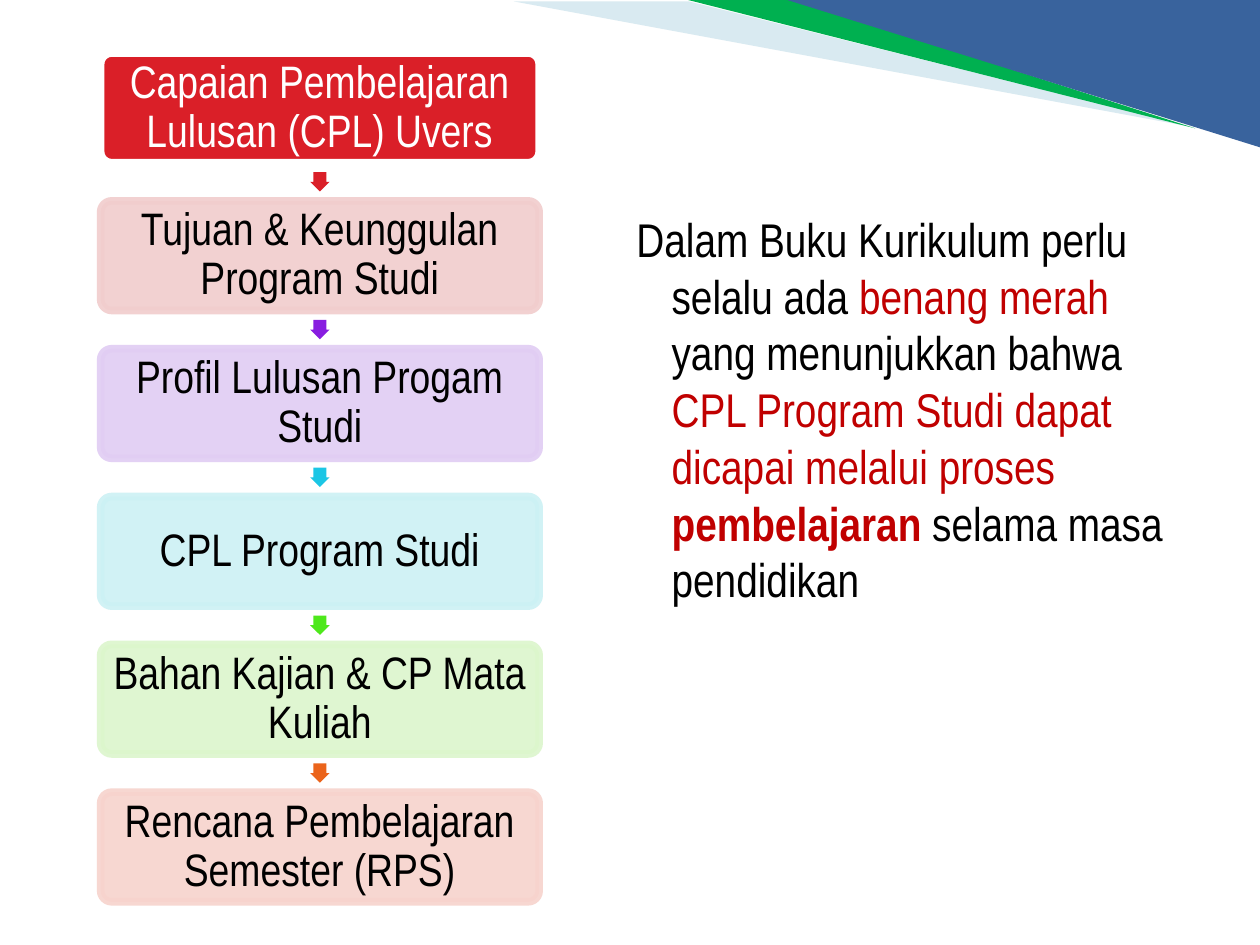
from lxml import etree
from pptx import Presentation
from pptx.dml.color import RGBColor
from pptx.enum.shapes import MSO_SHAPE
from pptx.enum.text import MSO_ANCHOR, PP_ALIGN
from pptx.oxml.ns import qn
from pptx.util import Cm, Pt

ROUNDED = MSO_SHAPE.ROUNDED_RECTANGLE
DOWN_ARROW = MSO_SHAPE.DOWN_ARROW
RIGHT_TRIANGLE = MSO_SHAPE.RIGHT_TRIANGLE
MIDDLE = MSO_ANCHOR.MIDDLE
CENTER = PP_ALIGN.CENTER

FONT = "Arial Narrow"
COLORS = {
    "white": "FFFFFF", "black": "000000", "accent": "C00000",
    "sky": "A0CBDC", "green": "00B050", "blue": "39639D",
    "red": "DA1F28", "violet": "881DE0", "cyan": "1BC6E5",
    "lime": "4EE81B", "orange": "EB641B",
    "pale red": "F1CDCD", "pale violet": "E1CDF3", "pale cyan": "CCF1F4",
    "pale lime": "DCF6CC", "pale orange": "F7D3CD",
}

STEPS = [
    ("Capaian Pembelajaran Lulusan (CPL) Uvers", "red", "white", "white", 100),
    ("Tujuan & Keunggulan Program Studi", "pale red", "pale red", "black", 90),
    ("Profil Lulusan Progam Studi", "pale violet", "pale violet", "black", 90),
    ("CPL Program Studi", "pale cyan", "pale cyan", "black", 90),
    ("Bahan Kajian & CP Mata Kuliah", "pale lime", "pale lime", "black", 90),
    ("Rencana Pembelajaran Semester (RPS)", "pale orange", "pale orange", "black", 90),
]
ARROW_COLORS = ["red", "violet", "cyan", "lime", "orange"]
MESSAGE = [
    ("Dalam Buku Kurikulum perlu selalu ada ", "black", False),
    ("benang merah ", "accent", False),
    ("yang menunjukkan bahwa ", "black", False),
    ("CPL Program Studi dapat dicapai melalui proses ", "accent", False),
    ("pembelajaran ", "accent", True),
    ("selama masa pendidikan", "black", False),
]
RAYS = [
    ([(10.36, 0.03), (13.89, 0.03), (24.08, 2.57)], "sky", 40),
    ([(13.87, 0), (16.03, 0), (24.1, 2.59)], "green", 100),
]

SLIDE_W, SLIDE_H = 25.4, 19.05
STEP_X, STEP_Y, STEP_W, STEP_H, STEP_PITCH = 2.03, 1.07, 8.84, 2.21, 2.98
ARROW_SIZE = 0.39
CORNER_W, CORNER_H = 9.53, 2.97


def paint(fill, color, opacity=100):
    fill.solid()
    fill.fore_color.rgb = RGBColor.from_string(COLORS[color])
    if opacity < 100:
        for tint in fill._xPr.iter(qn("a:srgbClr")):
            etree.SubElement(tint, qn("a:alpha"), val=str(opacity * 1000))


def style(shape, color, opacity=100):
    shape.shadow.inherit = False
    shape.line.fill.background()
    paint(shape.fill, color, opacity)


def add_run(paragraph, text, size, color, bold=False):
    run = paragraph.add_run()
    run.text = text
    run.font.name = FONT
    run.font.size = Pt(size)
    run.font.bold = bold
    run.font.color.rgb = RGBColor.from_string(COLORS[color])


def add_corner(shapes):
    for points, color, opacity in RAYS:
        start, *rest = [(Cm(x), Cm(y)) for x, y in points]
        builder = shapes.build_freeform(*start)
        builder.add_line_segments(rest)
        style(builder.convert_to_shape(), color, opacity)
    corner = shapes.add_shape(RIGHT_TRIANGLE, Cm(SLIDE_W - CORNER_W), 0,
                              Cm(CORNER_W), Cm(CORNER_H))
    corner.rotation = 180
    style(corner, "blue")


def add_step(shapes, top, text, fill, border, ink, opacity):
    step = shapes.add_shape(ROUNDED, Cm(STEP_X), Cm(top), Cm(STEP_W), Cm(STEP_H))
    step.adjustments[0] = 0.1
    style(step, fill, opacity)
    paint(step.line.fill, border, opacity)
    step.line.width = Pt(4.33)
    frame = step.text_frame
    frame.word_wrap = True
    frame.vertical_anchor = MIDDLE
    frame.margin_left = frame.margin_right = Cm(0.04)
    frame.margin_top = frame.margin_bottom = Cm(0.04)
    paragraph = frame.paragraphs[0]
    paragraph.alignment = CENTER
    paragraph.line_spacing = 0.9
    add_run(paragraph, text, 26, ink)


def add_arrow(shapes, middle, color):
    arrow = shapes.add_shape(DOWN_ARROW, Cm(STEP_X + (STEP_W - ARROW_SIZE) / 2),
                             Cm(middle - ARROW_SIZE / 2), Cm(ARROW_SIZE), Cm(ARROW_SIZE))
    arrow.adjustments[0] = 0.67
    arrow.adjustments[1] = 0.5
    style(arrow, color)


def add_message(shapes):
    message = shapes.add_textbox(Cm(12.27), Cm(4.11), Cm(11.86), Cm(12.57))
    message.text_frame.word_wrap = True
    paragraph = message.text_frame.paragraphs[0]
    properties = paragraph._p.get_or_add_pPr()
    properties.set("marL", str(Cm(1.02)))
    properties.set("indent", str(Cm(-0.71)))
    for text, color, bold in MESSAGE:
        add_run(paragraph, text, 27, color, bold)


def main():
    deck = Presentation()
    deck.slide_width, deck.slide_height = Cm(SLIDE_W), Cm(SLIDE_H)
    shapes = deck.slides.add_slide(deck.slide_layouts[6]).shapes
    add_corner(shapes)
    for index, step in enumerate(STEPS):
        add_step(shapes, STEP_Y + index * STEP_PITCH, *step)
    for index, color in enumerate(ARROW_COLORS):
        gap_middle = STEP_Y + index * STEP_PITCH + (STEP_H + STEP_PITCH) / 2
        add_arrow(shapes, gap_middle, color)
    add_message(shapes)
    deck.save("out.pptx")


if __name__ == "__main__":
    main()
